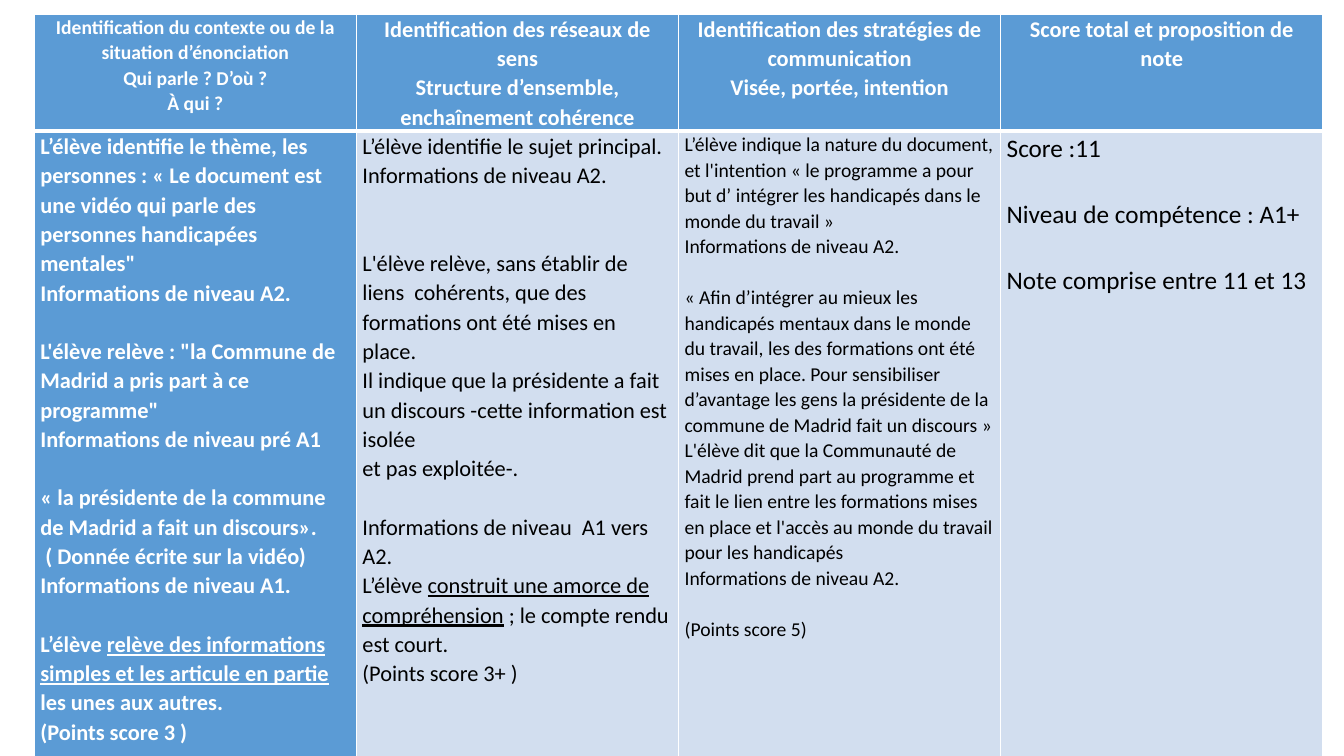
from dataclasses import dataclass

from lxml import etree
from pptx import Presentation
from pptx import util as u
from pptx.dml.color import RGBColor
from pptx.enum import text
from pptx.oxml.ns import qn


@dataclass(frozen=True)
class Theme:
    font: str = "Calibri"
    header_fill: str = "5B9BD5"
    body_fill: str = "D2DEEF"
    light: str = "FFFFFF"
    dark: str = "000000"
    small: int = 14
    medium: int = 16
    large: int = 18
    line_spacing: float = 1.07
    font_height: float = 1.22
    thin: int = 1
    thick: int = 3


THEME = Theme()

# Each column: header size, header lines, body size, body blocks.
# Blocks stand one line apart (an empty block widens the gap); _..._ is underlined.
COLUMNS = [
    (THEME.small,
     ["Identification du contexte ou de la situation d’énonciation",
      "Qui parle ? D’où ?",
      "À qui ?"],
     THEME.medium,
     [["L’élève identifie le thème, les personnes : « Le document est une vidéo "
       "qui parle des personnes handicapées mentales\"",
       "Informations de niveau A2."],
      ["L'élève relève : \"la Commune de Madrid a pris part à ce programme\"",
       "Informations de niveau pré A1"],
      ["« la présidente de la commune de Madrid a fait un discours».",
       " ( Donnée écrite sur la vidéo)",
       "Informations de niveau A1."],
      ["L’élève _relève des informations simples et les articule en partie_ "
       "les unes aux autres.",
       "(Points score 3 )"]]),
    (THEME.medium,
     ["Identification des réseaux de sens",
      "Structure d’ensemble, enchaînement cohérence"],
     THEME.medium,
     [["L’élève identifie le sujet principal.",
       "Informations de niveau A2."],
      [],
      ["L'élève relève, sans établir de liens  cohérents, que des formations "
       "ont été mises en place.",
       "Il indique que la présidente a fait un discours -cette information est isolée",
       "et pas exploitée-."],
      ["Informations de niveau  A1 vers A2.",
       "L’élève _construit une amorce de compréhension_ ; le compte rendu est court.",
       "(Points score 3+ )"]]),
    (THEME.medium,
     ["Identification des stratégies de communication",
      "Visée, portée, intention"],
     THEME.small,
     [["L’élève indique la nature du document, et l'intention « le programme a pour "
       "but d’ intégrer les handicapés dans le monde du travail »",
       "Informations de niveau A2."],
      ["« Afin d’intégrer au mieux les handicapés mentaux dans le monde du travail, "
       "les des formations ont été mises en place. Pour sensibiliser d’avantage les "
       "gens la présidente de la commune de Madrid fait un discours »",
       "L'élève dit que la Communauté de Madrid prend part au programme et fait le "
       "lien entre les formations mises en place et l'accès au monde du travail pour "
       "les handicapés",
       "Informations de niveau A2."],
      ["(Points score 5)"]]),
    (THEME.medium,
     ["Score total et proposition de note"],
     THEME.large,
     [["Score :11"],
      ["Niveau de compétence : A1+"],
      ["Note comprise entre 11 et 13"]]),
]

SLIDE_SIZE = (13.33, 7.5)
TABLE_LEFT, TABLE_TOP, TABLE_WIDTH = 0.34, 0.14, 12.78
ROW_HEIGHTS = (1.04, 6.32)
SIDE_MARGIN = 0.06


def write_text(frame, blocks, *, size, color, bold, align):
    frame.word_wrap = True
    paragraph, gap = frame.paragraphs[0], 0
    line_height = size * THEME.font_height * THEME.line_spacing
    started = False
    for block in blocks:
        for position, line in enumerate(block):
            if started:
                paragraph = frame.add_paragraph()
            started = True
            paragraph.alignment = align
            paragraph.line_spacing = THEME.line_spacing
            paragraph.space_before = u.Pt(0 if position else gap * line_height)
            for index, part in enumerate(line.split("_")):
                run = paragraph.add_run()
                run.text = part
                font = run.font
                font.name, font.size, font.bold = THEME.font, u.Pt(size), bold
                font.color.rgb = RGBColor.from_string(color)
                if index % 2:
                    font.underline = True
        gap = 1 if block else gap + 1


def draw_borders(cell, **widths):
    properties = cell._tc.get_or_add_tcPr()
    for side in "LRTB":
        width = widths.get(side, THEME.thin)
        border = etree.SubElement(properties, qn(f"a:ln{side}"), w=str(u.Pt(width)))
        solid = etree.SubElement(border, qn("a:solidFill"))
        etree.SubElement(solid, qn("a:srgbClr"), val=THEME.light)


def fill_cell(cell, fill, blocks, borders, **text_format):
    cell.margin_left = cell.margin_right = u.Inches(SIDE_MARGIN)
    cell.margin_top = cell.margin_bottom = 0
    draw_borders(cell, **borders)
    cell.fill.solid()
    cell.fill.fore_color.rgb = RGBColor.from_string(fill)
    write_text(cell.text_frame, blocks, **text_format)


def main():
    deck = Presentation()
    deck.slide_width, deck.slide_height = map(u.Inches, SLIDE_SIZE)
    slide = deck.slides.add_slide(deck.slide_layouts[6])
    frame = slide.shapes.add_table(
        len(ROW_HEIGHTS), len(COLUMNS), u.Inches(TABLE_LEFT), u.Inches(TABLE_TOP),
        u.Inches(TABLE_WIDTH), u.Inches(sum(ROW_HEIGHTS)))
    grid = frame.table
    grid.horz_banding = False
    for row, height in zip(grid.rows, ROW_HEIGHTS):
        row.height = u.Inches(height)

    for index, (header_size, header, body_size, body) in enumerate(COLUMNS):
        grid.columns[index].width = u.Inches(TABLE_WIDTH / len(COLUMNS))
        fill_cell(grid.cell(0, index), THEME.header_fill, [header], {"B": THEME.thick},
                  size=header_size, color=THEME.light, bold=True,
                  align=text.PP_ALIGN.CENTER)
        is_label = index == 0
        fill_cell(grid.cell(1, index),
                  THEME.header_fill if is_label else THEME.body_fill,
                  body, {"T": THEME.thick}, size=body_size,
                  color=THEME.light if is_label else THEME.dark,
                  bold=is_label, align=text.PP_ALIGN.LEFT)
    deck.save("out.pptx")


if __name__ == "__main__":
    main()
